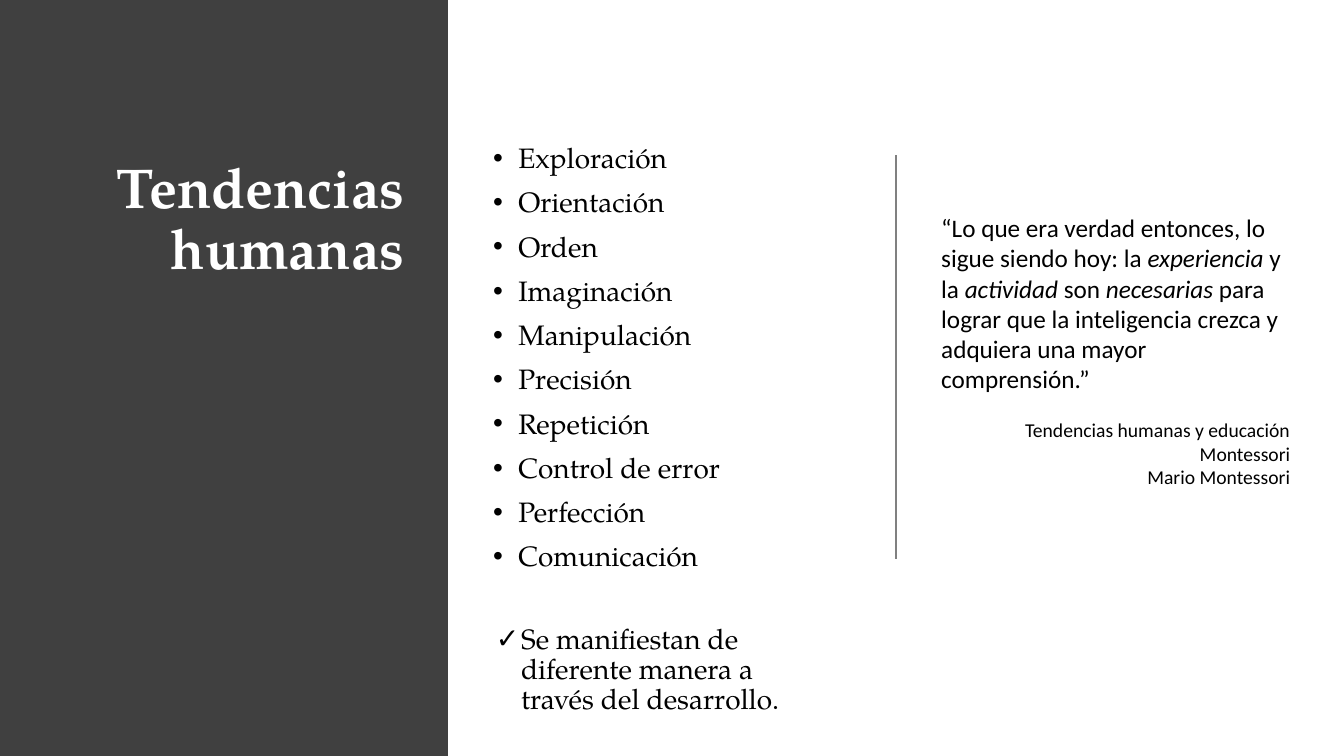
from dataclasses import dataclass

from lxml import etree
from pptx import Presentation
from pptx.dml.color import RGBColor
from pptx.enum import shapes, text
from pptx.oxml import ns
from pptx.util import Pt


@dataclass(frozen=True)
class Theme:
    panel: str = "404040"
    rule: str = "808080"
    light: str = "FFFFFF"
    ink: str = "000000"
    serif: str = "TeX Gyre Pagella"
    sans: str = "Calibri"
    head: float = 40
    body: float = 20
    quote: float = 18
    cite: float = 14


@dataclass(frozen=True)
class Box:
    left: float
    top: float
    width: float
    height: float

    def size(self) -> list:
        return [Pt(v) for v in (self.left, self.top, self.width, self.height)]


THEME = Theme()
PANEL = Box(0, 0, 320, 540)
TITLE = Box(23.75, 111, 272, 343.5)
LIST = Box(345, 99.5, 270, 343.5)
NOTE = Box(347, 443, 252, 81.5)
QUOTE = Box(665.25, 148.25, 263.5, 160)
CITE = Box(665.25, 295.25, 263.5, 58.5)
RULE_X, RULE_TOP, RULE_END = 640, 111, 399

TRENDS = [
    "Exploración", "Orientación", "Orden", "Imaginación", "Manipulación",
    "Precisión", "Repetición", "Control de error", "Perfección", "Comunicación",
]
SAYING = (
    "“Lo que era verdad entonces, lo sigue siendo hoy: la *experiencia* y la "
    "*actividad* son *necesarias* para lograr que la inteligencia crezca y "
    "adquiera una mayor comprensión.”"
)


def add_mark(para, mark: str) -> None:
    props = para._p.get_or_add_pPr()
    props.set("marL", str(Pt(18)))
    props.set("indent", str(Pt(-18)))
    etree.SubElement(props, ns.qn("a:buFont")).set("typeface", "Arial")
    etree.SubElement(props, ns.qn("a:buChar")).set("char", mark)


def write(shape, words: list[str], *, size: float, face: str = THEME.serif,
          color: str = THEME.ink, bold: bool = False, right: bool = False,
          lead: float = 0.9, gap: float = 0, mark: str = "") -> None:
    frame = shape.text_frame
    frame.word_wrap = True
    frame.auto_size = text.MSO_AUTO_SIZE.NONE
    frame.vertical_anchor = text.MSO_ANCHOR.TOP
    for row, line in enumerate(words):
        para = frame.add_paragraph() if row else frame.paragraphs[0]
        if mark:
            add_mark(para, mark)
        para.alignment = text.PP_ALIGN.RIGHT if right else text.PP_ALIGN.LEFT
        para.line_spacing = lead
        para.space_before = Pt(gap if row else 0)
        for part, piece in enumerate(line.split("*")):
            for step, chunk in enumerate(piece.split("\n")):
                if step:
                    para.add_line_break()
                run = para.add_run()
                run.text = chunk
                font = run.font
                font.name, font.size = face, Pt(size)
                font.bold, font.italic = bold, part % 2 == 1
                font.color.rgb = RGBColor.from_string(color)


def place(shape, box: Box):
    shape.left, shape.top, shape.width, shape.height = box.size()
    return shape


def add_panel(slide) -> None:
    panel = slide.shapes.add_shape(shapes.MSO_SHAPE.RECTANGLE, *PANEL.size())
    panel.shadow.inherit = False
    panel.fill.solid()
    panel.fill.fore_color.rgb = RGBColor.from_string(THEME.panel)
    panel.line.fill.background()
    slide.shapes._spTree.insert(2, panel._element)


def add_rule(slide) -> None:
    rule = slide.shapes.add_connector(
        shapes.MSO_CONNECTOR.STRAIGHT,
        Pt(RULE_X), Pt(RULE_TOP), Pt(RULE_X), Pt(RULE_END))
    rule.line.color.rgb = RGBColor.from_string(THEME.rule)
    rule.line.width = Pt(1)
    etree.SubElement(rule._element.spPr, ns.qn("a:effectLst"))


def main() -> None:
    deck = Presentation()
    deck.slide_width, deck.slide_height = Pt(960), Pt(540)
    slide = deck.slides.add_slide(deck.slide_layouts[3])
    title, trends, note = slide.placeholders
    add_panel(slide)
    write(place(title, TITLE), ["Tendencias humanas"], size=THEME.head,
          color=THEME.light, bold=True, right=True)
    write(place(trends, LIST), TRENDS, size=THEME.body, gap=10, mark="•")
    write(place(note, NOTE),
          ["Se manifiestan de diferente manera a través del desarrollo."],
          size=THEME.body, mark="✓")
    add_rule(slide)
    write(slide.shapes.add_textbox(*QUOTE.size()), [SAYING],
          size=THEME.quote, face=THEME.sans, lead=1.0)
    write(slide.shapes.add_textbox(*CITE.size()),
          ["Tendencias humanas y educación Montessori\nMario Montessori"],
          size=THEME.cite, face=THEME.sans, right=True, lead=1.0)
    deck.save("out.pptx")


if __name__ == "__main__":
    main()
